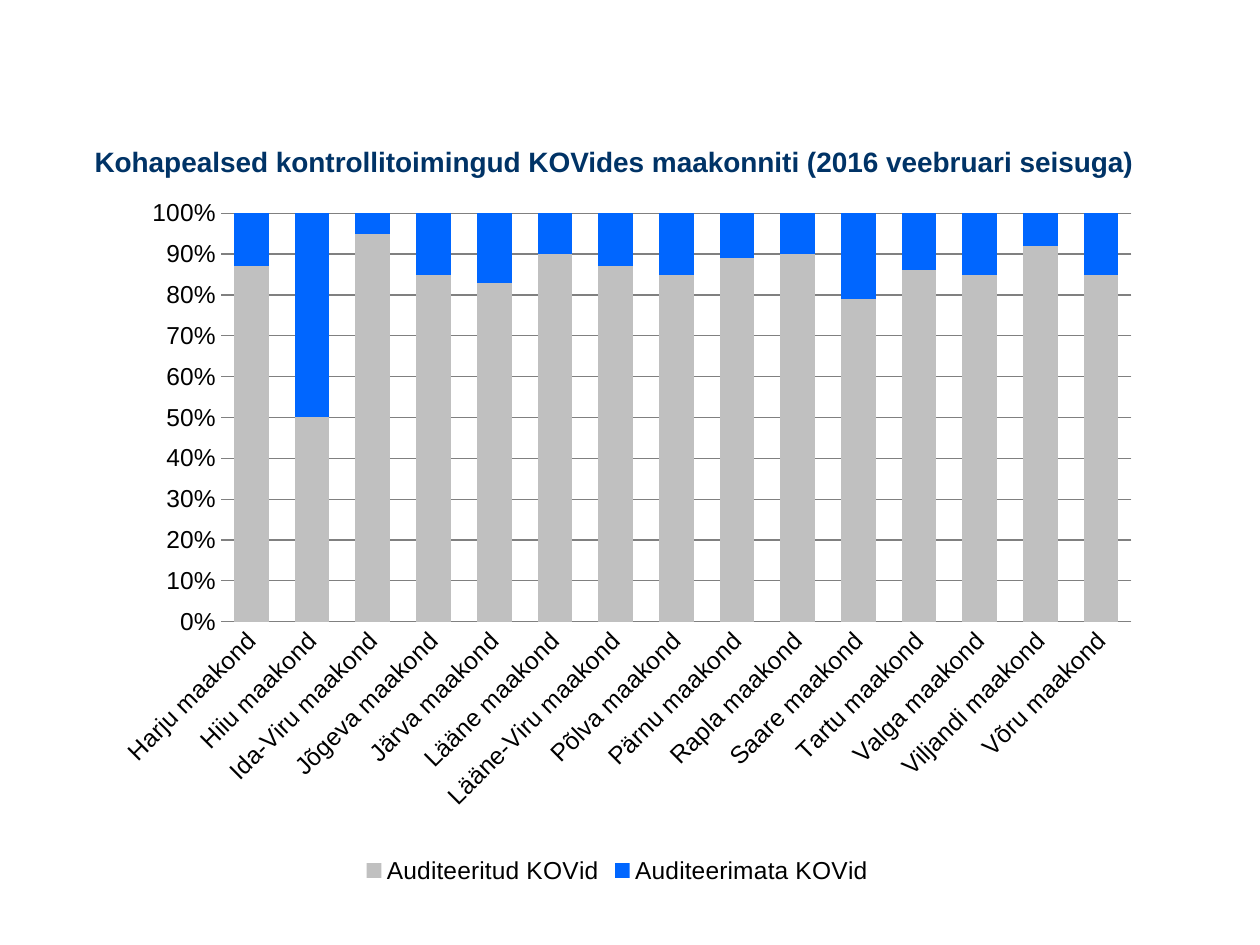
from dataclasses import dataclass

from pptx import Presentation
from pptx.chart.data import CategoryChartData
from pptx.dml.color import RGBColor
from pptx.enum.chart import XL_CHART_TYPE, XL_LEGEND_POSITION, XL_TICK_MARK
from pptx.enum.text import MSO_ANCHOR, PP_ALIGN
from pptx.oxml import parse_xml
from pptx.oxml.ns import nsdecls, qn
from pptx.util import Pt


@dataclass(frozen=True)
class Theme:
    font: str = "Arial"
    title_size: int = 16
    chart_size: int = 14
    title: str = "003366"
    text: str = "000000"
    grid: str = "808080"
    audited: str = "C0C0C0"
    unaudited: str = "0066FF"


THEME = Theme()
TITLE = "Kohapealsed kontrollitoimingud KOVides maakonniti (2016 veebruari seisuga)"

# Share of audited municipalities per county, in percent
AUDITED = {
    "Harju": 87, "Hiiu": 50, "Ida-Viru": 95, "Jõgeva": 85, "Järva": 83,
    "Lääne": 90, "Lääne-Viru": 87, "Põlva": 85, "Pärnu": 89, "Rapla": 90,
    "Saare": 79, "Tartu": 86, "Valga": 85, "Viljandi": 92, "Võru": 85,
}


def apply_format(target, values):
    for name, value in values.items():
        setattr(target, name, value)


def format_font(font, size, color, bold=False):
    apply_format(font, {"name": THEME.font, "size": Pt(size), "bold": bold})
    font.color.rgb = RGBColor.from_string(color)


def format_line(line, color):
    line.color.rgb = RGBColor.from_string(color)
    line.width = Pt(0.75)


def add_title(page):
    box = page.shapes.title
    apply_format(box, {"left": Pt(46.8), "top": Pt(72), "width": Pt(612), "height": Pt(72)})
    frame = box.text_frame
    # The deep bottom margin lifts the line above the middle of the box
    apply_format(frame, {"vertical_anchor": MSO_ANCHOR.MIDDLE, "word_wrap": True,
                         "margin_bottom": Pt(35)})
    para = frame.paragraphs[0]
    para.alignment = PP_ALIGN.LEFT
    span = para.add_run()
    span.text = TITLE
    format_font(span.font, THEME.title_size, THEME.title, bold=True)


def county_data():
    data = CategoryChartData(number_format="0%")
    data.categories = [f"{county} maakond" for county in AUDITED]
    data.add_series("Auditeeritud KOVid", [share / 100 for share in AUDITED.values()])
    data.add_series("Auditeerimata KOVid", [(100 - share) / 100 for share in AUDITED.values()])
    return data


def place_plot(chart, x, y, w, h):
    """Fix the inner plot area, as fractions of the chart."""
    plot_area = chart.plots[0]._element.getparent()
    for layout in plot_area.findall(qn("c:layout")):
        plot_area.remove(layout)
    modes = '<c:layoutTarget val="inner"/><c:xMode val="edge"/><c:yMode val="edge"/>'
    sizes = "".join(f'<c:{name} val="{value}"/>'
                    for name, value in {"x": x, "y": y, "w": w, "h": h}.items())
    plot_area.insert(0, parse_xml(
        f'<c:layout {nsdecls("c")}><c:manualLayout>{modes}{sizes}</c:manualLayout></c:layout>'))


def format_axes(chart):
    no_ticks = {"major_tick_mark": XL_TICK_MARK.NONE, "minor_tick_mark": XL_TICK_MARK.NONE}
    for axis in (chart.category_axis, chart.value_axis):
        apply_format(axis, no_ticks)
        format_font(axis.tick_labels.font, THEME.chart_size, THEME.text)

    # Slanted county names
    counties = chart.category_axis
    format_line(counties.format.line, THEME.grid)
    counties._element.find(qn("c:txPr")).find(qn("a:bodyPr")).set("rot", "-2700000")

    # Percent scale with gridlines
    shares = chart.value_axis
    apply_format(shares, {"minimum_scale": 0, "maximum_scale": 1, "major_unit": 0.1,
                          "has_major_gridlines": True})
    apply_format(shares.tick_labels, {"number_format": "0%", "number_format_is_linked": False})
    shares.format.line.fill.background()
    format_line(shares.major_gridlines.format.line, THEME.grid)


def add_county_chart(page):
    chart = page.shapes.add_chart(
        XL_CHART_TYPE.COLUMN_STACKED, Pt(46.8), Pt(105.8), Pt(612), Pt(402.5),
        county_data()).chart
    format_font(chart.font, THEME.chart_size, THEME.text)
    apply_format(chart, {"has_title": False, "has_legend": True})
    apply_format(chart.legend, {"position": XL_LEGEND_POSITION.BOTTOM,
                                "include_in_layout": False})
    format_font(chart.legend.font, THEME.chart_size, THEME.text)

    # Stacked columns
    plot = chart.plots[0]
    apply_format(plot, {"gap_width": 75, "overlap": 100, "vary_by_categories": False})
    for series, color in zip(plot.series, (THEME.audited, THEME.unaudited)):
        series.format.fill.solid()
        series.format.fill.fore_color.rgb = RGBColor.from_string(color)

    format_axes(chart)
    place_plot(chart, 0.13, 0.04, 0.85, 0.58)


def main():
    deck = Presentation()
    apply_format(deck, {"slide_width": Pt(720), "slide_height": Pt(540)})
    page = deck.slides.add_slide(deck.slide_layouts.get_by_name("Title Only"))
    add_title(page)
    add_county_chart(page)
    deck.save("out.pptx")


if __name__ == "__main__":
    main()
